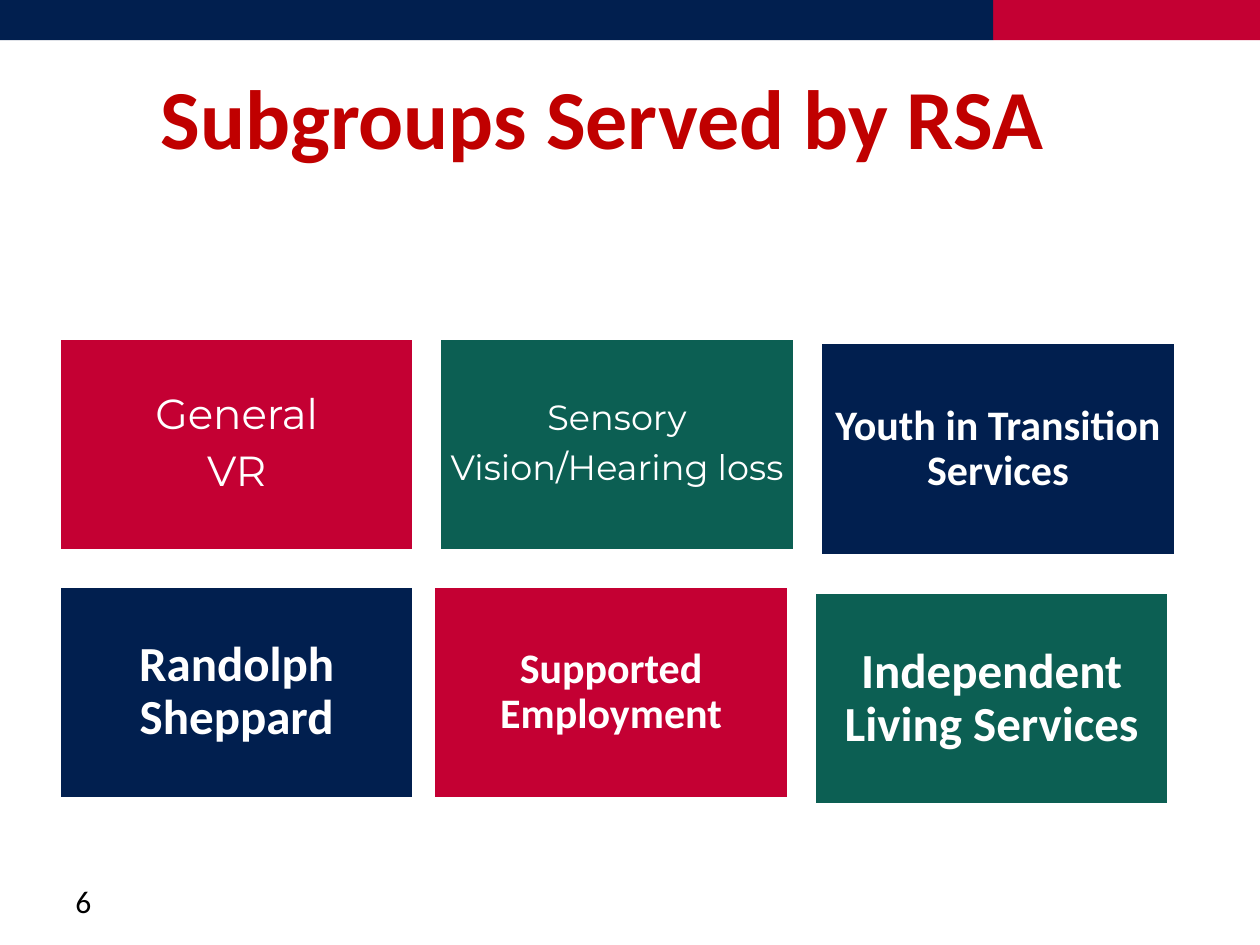
from pptx import Presentation
from pptx.dml.color import RGBColor
from pptx.enum.shapes import MSO_SHAPE
from pptx.enum.text import MSO_ANCHOR, PP_ALIGN
from pptx.util import Cm, Pt

COLOURS = {
    "navy": "011F4F",
    "red": "C40033",
    "green": "0C5F53",
    "title": "C00000",
    "white": "FFFFFF",
    "black": "000000",
}
HEADING = {"name": "Calibri", "size": Pt(48), "bold": True}
NUMBER = {"name": "Calibri", "size": Pt(18), "bold": False}
LARGE = {"name": "Calibri", "size": Pt(28), "bold": True}
MEDIUM = {"name": "Calibri", "size": Pt(24), "bold": True}
LIGHT = {"name": "Montserrat", "size": Pt(24), "bold": False}
SMALL = {"name": "Montserrat", "size": Pt(20), "bold": False}
CARD_SIZE = (7.16, 4.29)
CARDS = [
    (1.19, 6.81, "red", ["General", "VR"], LIGHT, 0.25),
    (8.86, 6.81, "green", ["Sensory", "Vision/Hearing loss"], SMALL, 0.2),
    (16.54, 6.91, "navy", ["Youth in Transition Services"], MEDIUM, 0.25),
    (1.19, 11.81, "navy", ["Randolph Sheppard"], LARGE, 0.3),
    (8.74, 11.81, "red", ["Supported Employment"], MEDIUM, 0.25),
    (16.41, 11.94, "green", ["Independent Living Services"], LARGE, 0.3),
]


def colour(name):
    """Return the named colour."""
    return RGBColor.from_string(COLOURS[name])


def write(box, lines, font, ink, align, insets, spacing):
    """Fill a box with paragraphs that share one format."""
    frame = box.text_frame
    side, edge = (Cm(inset) for inset in insets)
    settings = {
        "word_wrap": True,
        "vertical_anchor": MSO_ANCHOR.MIDDLE,
        "margin_left": side,
        "margin_right": side,
        "margin_top": edge,
        "margin_bottom": edge,
    }
    for key, value in settings.items():
        setattr(frame, key, value)
    for index, line in enumerate(lines):
        para = frame.add_paragraph() if index else frame.paragraphs[0]
        for key, value in {"alignment": align, **spacing}.items():
            setattr(para, key, value)
        span = para.add_run()
        span.text = line
        for key, value in font.items():
            setattr(span.font, key, value)
        span.font.color.rgb = colour(ink)


def add_rectangle(page, area, fill):
    """Add a plain filled rectangle."""
    box = page.shapes.add_shape(MSO_SHAPE.RECTANGLE, *map(Cm, area))
    box.shadow.inherit = False
    box.fill.solid()
    box.fill.fore_color.rgb = colour(fill)
    box.line.fill.background()
    return box


def add_label(page, area, text, font, ink, align):
    """Add a single line of text."""
    box = page.shapes.add_textbox(*map(Cm, area))
    write(box, [text], font, ink, align, (0.25, 0.13), {})


def add_card(page, left, top, fill, lines, font, inset):
    """Add a white-edged subgroup card."""
    box = add_rectangle(page, (left, top, *CARD_SIZE), fill)
    box.line.color.rgb = colour("white")
    box.line.width = Pt(2)
    spacing = {"line_spacing": 0.9, "space_after": Pt(7)}
    write(box, lines, font, "white", PP_ALIGN.CENTER, (inset, inset), spacing)


def main():
    """Build and save the slide."""
    deck = Presentation()
    deck.slide_width, deck.slide_height = Cm(25.4), Cm(19.05)
    page = deck.slides.add_slide(deck.slide_layouts[6])
    add_rectangle(page, (20.02, 0, 5.38, 0.81), "red")
    add_rectangle(page, (0, 0, 20.02, 0.81), "navy")
    add_label(page, (1.27, 17.65, 5.92, 1.02), "6", NUMBER, "black", PP_ALIGN.LEFT)
    add_label(page, (0.71, 1.14, 22.86, 2.41), "Subgroups Served by RSA",
              HEADING, "title", PP_ALIGN.CENTER)
    for card in CARDS:
        add_card(page, *card)
    deck.save("out.pptx")


if __name__ == "__main__":
    main()
